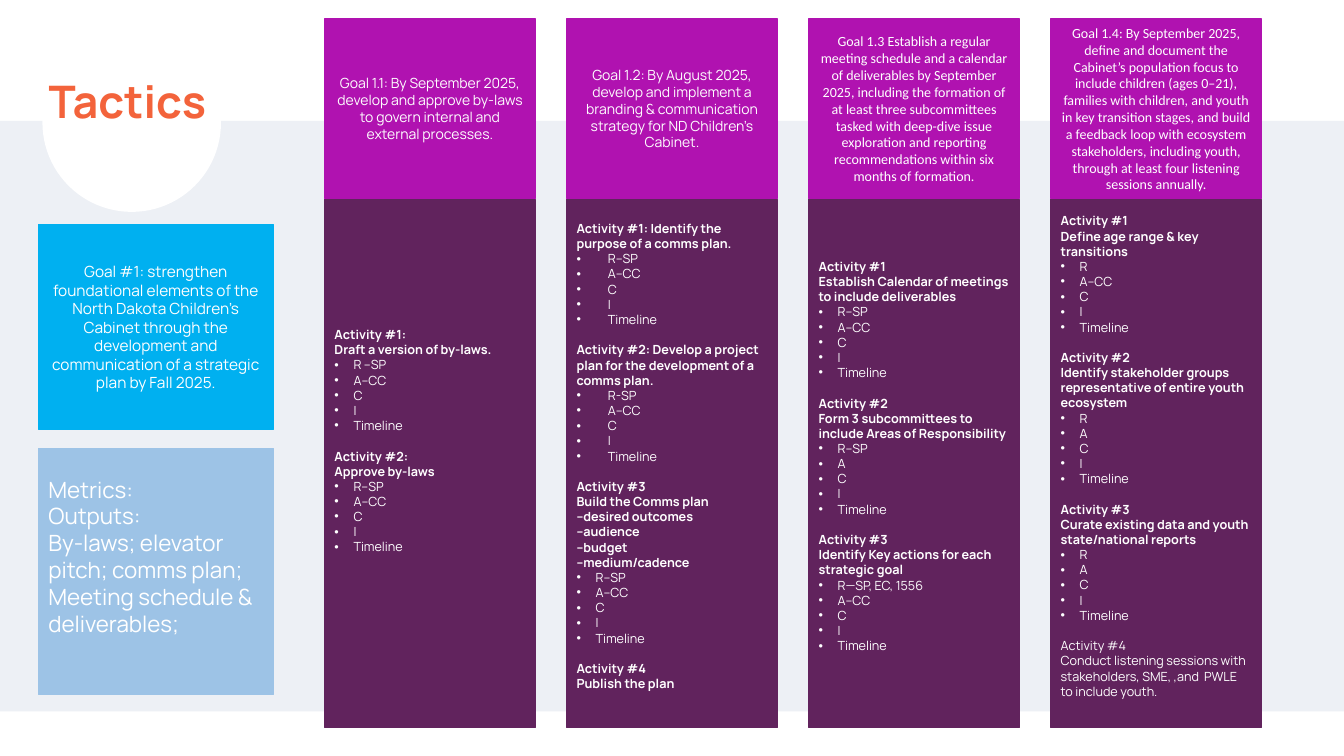
from pptx import Presentation
from pptx.dml.color import RGBColor
from pptx.enum.shapes import MSO_SHAPE as Preset
from pptx.enum.text import MSO_ANCHOR as Anchor, PP_ALIGN as Align
from pptx.oxml.ns import qn
from pptx.util import Cm, Pt
from lxml.etree import SubElement

WHITE, BAND, ORANGE = "FFFFFF", "EDF0F5", "F3633B"
PURPLE, PLUM, CYAN, PALE_BLUE = "B012B0", "61235D", "00B0F0", "9DC3E6"

COLUMN_LEFT, COLUMN_PITCH, COLUMN_WIDTH = 8.18, 6.1, 5.31
GOAL_TOP, GOAL_HEIGHT = 0.48, 4.52
ACTIVITY_TOP, ACTIVITY_HEIGHT = 5.03, 13.31
SIDE_LEFT, SIDE_WIDTH = 0.97, 5.92
NARROW, WIDE = 0.48, 0.79
ACTIVITY_LINE = 10.9

MAIN_GOAL = ("Goal #1: strengthen foundational elements of the North Dakota Children’s Cabinet "
             "through the development and communication of a strategic plan by Fall 2025.")
METRICS = ["Metrics:", "Outputs:",
           "By-laws; elevator pitch; comms plan; Meeting schedule & deliverables;"]

# Each column: goal, goal font, bottom inset, activities.
# Each activity: headings, responsible, accountable, bullet indent.
COLUMNS = [
    ("Goal 1.1: By September 2025, develop and approve by-laws to govern internal and "
     "external processes.", "Manrope", 1.28, [
         (["Activity #1:", "Draft a version of by-laws."], "R --SP", "A--CC", NARROW),
         (["Activity #2:", "Approve by-laws"], "R--SP", "A--CC", NARROW)]),
    ("Goal 1.2: By August 2025, develop and implement a branding & communication strategy "
     "for ND Children’s Cabinet.", "Manrope", 0.51, [
         (["Activity #1: Identify the purpose of a comms plan."], "R--SP", "A--CC", WIDE),
         (["Activity #2: Develop a project plan for the development of a comms plan."],
          "R-SP", "A--CC", WIDE),
         (["Activity #3", "Build the Comms plan", "--desired outcomes", "--audience",
           "--budget", "--medium/cadence"], "R--SP", "A--CC", NARROW),
         (["Activity #4", "Publish the plan"], None, None, None)]),
    ("Goal 1.3 Establish a regular meeting schedule and a calendar of deliverables by "
     "September 2025, including the formation of at least three subcommittees tasked with "
     "deep-dive issue exploration and reporting recommendations within six months of "
     "formation.", "Calibri", 0.51, [
         (["Activity #1", "Establish Calendar of meetings to include deliverables"],
          "R--SP", "A--CC", NARROW),
         (["Activity #2", "Form 3 subcommittees to include Areas of Responsibility"],
          "R--SP", "A", NARROW),
         (["Activity #3", "Identify Key actions for each strategic goal"],
          "R—SP, EC, 1556", "A--CC", NARROW)]),
    ("Goal 1.4: By September 2025, define and document the Cabinet’s population focus to "
     "include children (ages 0–21), families with children, and youth in key transition "
     "stages, and build a feedback loop with ecosystem stakeholders, including youth, "
     "through at least four listening sessions annually.", "Calibri", 0.51, [
         (["Activity #1", "Define age range & key transitions"], "R", "A--CC", NARROW),
         (["Activity #2", "Identify stakeholder groups representative of entire youth "
           "ecosystem"], "R", "A", NARROW),
         (["Activity #3", "Curate existing data and youth state/national reports"],
          "R", "A", NARROW),
         (["Activity #4", "Conduct listening sessions with stakeholders, SME, ,and  PWLE "
           "to include youth."], None, None, None)]),
]
LIGHT_HEADING = "Conduct listening sessions"


def rgb(value):
    return RGBColor.from_string(value)


def style(paragraph, size, color=WHITE, font="Manrope", bold=False, align=Align.LEFT):
    paragraph.alignment = align
    paragraph.font.size = Pt(size)
    paragraph.font.name = font
    paragraph.font.bold = bold
    paragraph.font.color.rgb = rgb(color)


def add_bullet(paragraph, indent):
    properties = paragraph._p.get_or_add_pPr()
    properties.set("marL", str(Cm(indent)))
    properties.set("indent", str(-Cm(indent)))
    SubElement(properties, qn("a:buFont"), typeface="Arial")
    SubElement(properties, qn("a:buChar"), char="•")


def add_block(slide, preset, left, top, width, height, fill):
    block = slide.shapes.add_shape(preset, Cm(left), Cm(top), Cm(width), Cm(height))
    block.shadow.inherit = False
    block.fill.solid()
    block.fill.fore_color.rgb = rgb(fill)
    block.line.fill.background()
    return block


def add_panel(slide, left, top, width, height, fill, bottom_inset=0.13):
    """Add an outlined rectangle and return its text frame."""
    panel = add_block(slide, Preset.RECTANGLE, left, top, width, height, fill)
    panel.line.color.rgb = rgb(fill)
    panel.line.width = Pt(1)
    frame = panel.text_frame
    frame.word_wrap = True
    frame.vertical_anchor = Anchor.MIDDLE
    frame.margin_bottom = Cm(bottom_inset)
    return frame


def write_lines(frame, lines, size, **look):
    frame.text = "\n".join(lines)
    for paragraph in frame.paragraphs:
        style(paragraph, size, **look)


def write_activities(frame, activities):
    paragraph = frame.paragraphs[0]
    for number, (headings, responsible, accountable, indent) in enumerate(activities):
        roles = [responsible, accountable, "C", "I", "Timeline"] if responsible else []
        light = headings[-1].startswith(LIGHT_HEADING)
        for position, line in enumerate(headings + roles):
            if number or position:
                paragraph = frame.add_paragraph()
            paragraph.text = line
            if number and position == 0:
                paragraph.space_before = Pt(ACTIVITY_LINE)
            is_role = position >= len(headings)
            if is_role:
                add_bullet(paragraph, indent)
            style(paragraph, 9, bold=not (is_role or light))


def place_title(slide):
    title = slide.shapes.title
    title.left, title.top, title.width, title.height = Cm(0.97), Cm(0.48), Cm(5.92), Cm(4.27)
    title.text_frame.vertical_anchor = Anchor.MIDDLE
    write_lines(title.text_frame, ["Tactics"], 32, color=ORANGE, bold=True)
    title.text_frame.paragraphs[0].line_spacing = 0.9
    slide.shapes._spTree.append(title._element)


def main():
    deck = Presentation()
    deck.slide_width, deck.slide_height = Cm(33.87), Cm(19.05)
    slide = deck.slides.add_slide(deck.slide_layouts[5])

    add_block(slide, Preset.RECTANGLE, 0, 3.05, 33.87, 14.88, BAND)
    add_block(slide, Preset.OVAL, 1.07, 0.84, 4.5, 4.5, WHITE)
    place_title(slide)

    main_goal = add_panel(slide, SIDE_LEFT, 5.66, SIDE_WIDTH, 5.16, CYAN)
    write_lines(main_goal, [MAIN_GOAL], 11, align=Align.CENTER)
    metrics = add_panel(slide, SIDE_LEFT, 11.3, SIDE_WIDTH, 6.2, PALE_BLUE, 0.89)
    write_lines(metrics, METRICS, 16)

    for index, (goal, font, bottom_inset, activities) in enumerate(COLUMNS):
        left = COLUMN_LEFT + index * COLUMN_PITCH
        header = add_panel(slide, left, GOAL_TOP, COLUMN_WIDTH, GOAL_HEIGHT, PURPLE)
        write_lines(header, [goal], 10, font=font, align=Align.CENTER)
        body = add_panel(slide, left, ACTIVITY_TOP, COLUMN_WIDTH, ACTIVITY_HEIGHT, PLUM,
                         bottom_inset)
        write_activities(body, activities)

    deck.save("out.pptx")


if __name__ == "__main__":
    main()
